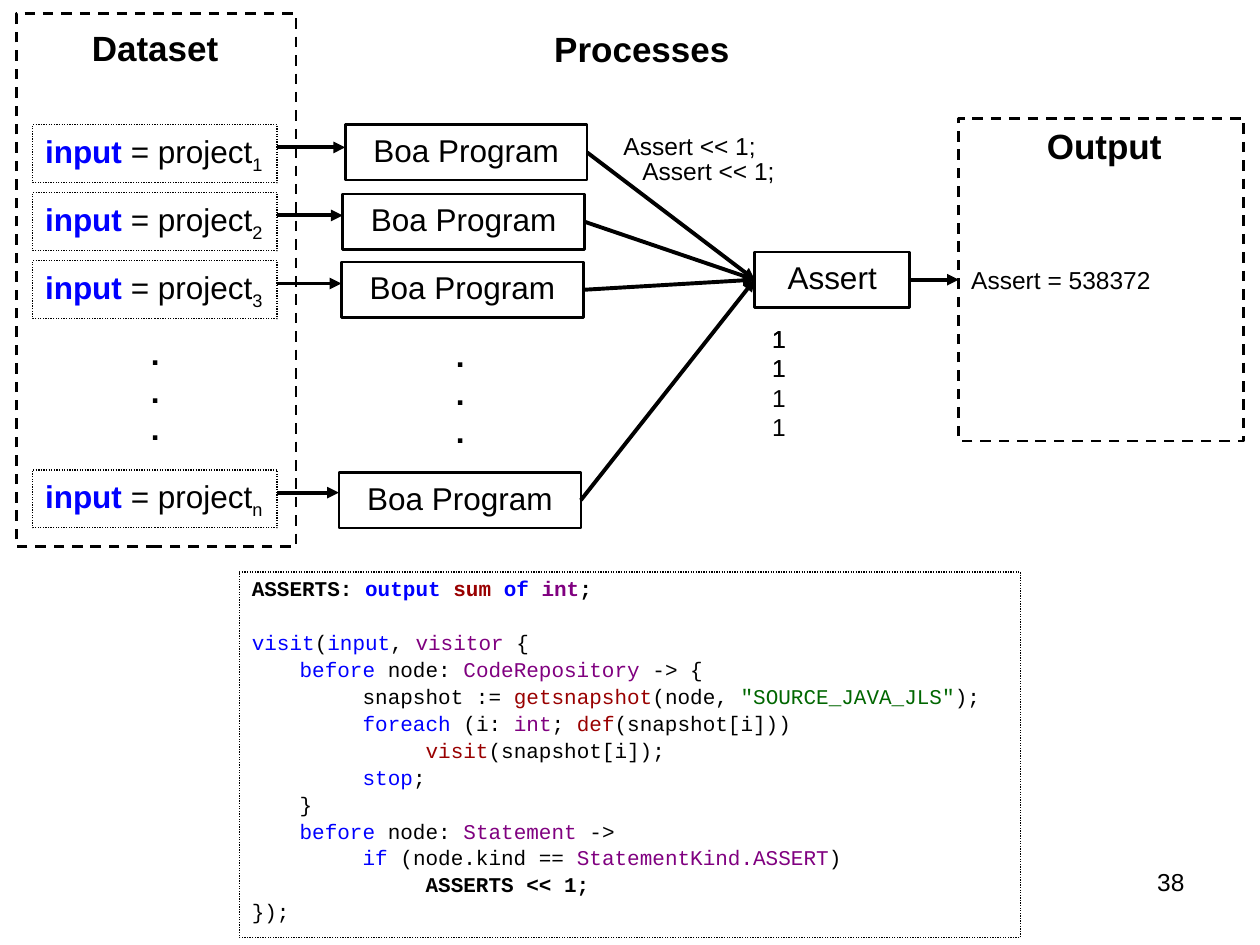
"""Build a slide showing how a Boa program counts asserts over a dataset."""
from lxml import etree
from pptx import Presentation
from pptx.dml.color import RGBColor
from pptx.enum.dml import MSO_LINE
from pptx.enum.shapes import MSO_CONNECTOR, MSO_SHAPE
from pptx.enum.text import MSO_ANCHOR, MSO_AUTO_SIZE, PP_ALIGN
from pptx.oxml.ns import qn
from pptx.util import Inches, Pt

RECTANGLE = MSO_SHAPE.RECTANGLE
STRAIGHT = MSO_CONNECTOR.STRAIGHT
DASH, DOTTED = MSO_LINE.DASH, MSO_LINE.ROUND_DOT
MIDDLE, TOP = MSO_ANCHOR.MIDDLE, MSO_ANCHOR.TOP
LEFT, CENTER, RIGHT = PP_ALIGN.LEFT, PP_ALIGN.CENTER, PP_ALIGN.RIGHT
FIT_SHAPE, FIXED_SIZE = MSO_AUTO_SIZE.SHAPE_TO_FIT_TEXT, MSO_AUTO_SIZE.NONE

BLACK, WHITE, BLUE = "000000", "FFFFFF", "0000FF"
RED, PURPLE, GREEN = "990000", "800080", "006600"

HEADINGS = [
    ("Dataset", 0.63, 0.16, 1.25),
    ("Processes", 4.3, 0.17, 1.6),
    ("Output", 8.21, 0.94, 1.13),
]
ROWS = [("1", 0.99, 2.74, 0.99), ("2", 1.53, 2.72, 1.54),
        ("3", 2.07, 2.71, 2.08), ("n", 3.73, 2.69, 3.75)]
ELLIPSES = [(1.1, 2.6), (3.52, 2.62)]
EMITTED = [(4.85, 0.99), (5, 1.19)]
RECEIVED = [(1, 0.34), (2, 0.57), (4, 1.04)]
INPUT_LEFT, INPUT_WIDTH, INPUT_HEIGHT = 0.26, 1.94, 0.46
PROGRAM_WIDTH, STEP_HEIGHT = 1.92, 0.44
ASSERT_LEFT, ASSERT_TOP, ASSERT_WIDTH = 5.99, 2, 1.23
OUTPUT_LEFT = 7.61

DECLARATION = [("ASSERTS: ", BLACK), ("output ", BLUE), ("sum ", RED),
               ("of ", BLUE), ("int", PURPLE), (";", BLACK)]
VISITOR = [("visit", BLUE), ("(", BLACK), ("input", BLUE), (", ", BLACK),
           ("visitor", PURPLE), (" {", BLACK)]
EMIT = [("\t\t\tASSERTS << 1;", BLACK)]
CODE = [
    DECLARATION,
    VISITOR,
    [("\t", BLACK), ("before", BLUE), (" node: ", BLACK),
     ("CodeRepository ", PURPLE), ("-> {", BLACK)],
    [("\t\tsnapshot := ", BLACK), ("getsnapshot", RED), ("(node, ", BLACK),
     ('"SOURCE_JAVA_JLS"', GREEN), (");", BLACK)],
    [("\t\t", BLACK), ("foreach ", BLUE), ("(i: ", BLACK), ("int", PURPLE),
     ("; ", BLACK), ("def", RED), ("(snapshot[i]))", BLACK)],
    [("\t\t\t", BLACK), ("visit", RED), ("(snapshot[i]);", BLACK)],
    [("\t\t", BLACK), ("stop", BLUE), (";", BLACK)],
    [("\t}", BLACK)],
    [("\t", BLACK), ("before", BLUE), (" node: ", BLACK),
     ("Statement", PURPLE), (" ->", BLACK)],
    [("\t\t", BLACK), ("if", BLUE), (" (node.kind == ", BLACK),
     ("StatementKind.ASSERT", PURPLE), (")", BLACK)],
    EMIT,
    [("});", BLACK)],
]
BOLD_LINES = (DECLARATION, EMIT)


def colour(value):
    return RGBColor.from_string(value)


def add_span(para, text, size, value=BLACK, bold=False, font="Arial"):
    span = para.add_run()
    span.text = text
    span.font.name, span.font.size, span.font.bold = font, Pt(size), bold
    span.font.color.rgb = colour(value)
    return span


def set_hanging(para, before):
    para.line_spacing, para.space_before = 0.9, Pt(before)
    properties = para._p.get_or_add_pPr()
    properties.set("marL", str(Inches(0.38)))
    properties.set("indent", str(Inches(-0.38)))


def add_box(page, left, top, width, height, weight, dash=None, fill=None):
    box = page.shapes.add_shape(RECTANGLE, Inches(left), Inches(top),
                                Inches(width), Inches(height))
    box.shadow.inherit = False
    if fill:
        box.fill.solid()
        box.fill.fore_color.rgb = colour(fill)
    else:
        box.fill.background()
    box.line.color.rgb = colour(BLACK)
    box.line.width = Pt(weight)
    if dash:
        box.line.dash_style = dash
    box.text_frame.vertical_anchor = MIDDLE
    box.text_frame.paragraphs[0].alignment = LEFT
    return box


def add_label(page, lines, left, top, width, height, size, bold=False):
    box = page.shapes.add_textbox(Inches(left), Inches(top),
                                  Inches(width), Inches(height))
    frame = box.text_frame
    frame.word_wrap, frame.auto_size = False, FIT_SHAPE
    for index, line in enumerate(lines):
        para = frame.add_paragraph() if index else frame.paragraphs[0]
        add_span(para, line, size, bold=bold)
    return box


def add_input(page, subscript, top):
    box = add_box(page, INPUT_LEFT, top, INPUT_WIDTH, INPUT_HEIGHT, 0.75, DOTTED)
    box.text_frame.word_wrap = False
    para = box.text_frame.paragraphs[0]
    add_span(para, "input ", 18, BLUE, True)
    add_span(para, "= project", 18)
    span = add_span(para, subscript, 18)
    span.font._element.set("baseline", "-25000")


def add_step(page, text, left, top, width):
    box = add_box(page, left, top, width, STEP_HEIGHT, 1.5, fill=WHITE)
    box.text_frame.word_wrap = True
    para = box.text_frame.paragraphs[0]
    para.alignment = CENTER
    set_hanging(para, 4.5)
    add_span(para, text, 18)


def add_arrow(page, start, end):
    points = [Inches(value) for value in (*start, *end)]
    arrow = page.shapes.add_connector(STRAIGHT, *points)
    arrow.line.color.rgb = colour(BLACK)
    arrow.line.width = Pt(2.25)
    etree.SubElement(arrow.line._get_or_add_ln(), qn("a:tailEnd"), type="triangle")
    etree.SubElement(arrow._element.spPr, qn("a:effectLst"))


def add_code(page):
    box = add_box(page, 1.9, 4.54, 6.2, 2.9, 0.75, DOTTED, WHITE)
    frame = box.text_frame
    frame.word_wrap, frame.vertical_anchor = True, TOP
    for index, line in enumerate(CODE):
        para = frame.add_paragraph() if index else frame.paragraphs[0]
        para.alignment = LEFT
        set_hanging(para, 18.2 if line is VISITOR else 2.4)
        for text, value in line:
            add_span(para, text, 12, value, line in BOLD_LINES, "Courier New")


def main():
    deck = Presentation()
    deck.slide_width, deck.slide_height = Inches(10), Inches(7.5)
    page = deck.slides.add_slide(deck.slide_layouts[6])

    number = add_label(page, ["38"], 7.17, 6.83, 2.33, 0.52, 14).text_frame
    number.word_wrap, number.auto_size = True, FIXED_SIZE
    number.paragraphs[0].alignment = RIGHT

    add_box(page, 0.13, 0.11, 2.22, 4.23, 1.5, DASH)
    result = add_box(page, OUTPUT_LEFT, 0.94, 2.26, 2.56, 1.5, DASH).text_frame
    result.word_wrap = False
    add_span(result.paragraphs[0], "Assert = 538372", 14)
    for text, left, top, width in HEADINGS:
        add_label(page, [text], left, top, width, 0.43, 20, True)

    assert_middle = ASSERT_TOP + STEP_HEIGHT / 2
    add_step(page, "Assert", ASSERT_LEFT, ASSERT_TOP, ASSERT_WIDTH)
    for subscript, input_top, left, top in ROWS:
        add_input(page, subscript, input_top)
        add_step(page, "Boa Program", left, top, PROGRAM_WIDTH)
        arrow_top = input_top + 0.18
        add_arrow(page, (INPUT_LEFT + INPUT_WIDTH, arrow_top), (left, arrow_top))
        add_arrow(page, (left + PROGRAM_WIDTH, top + STEP_HEIGHT / 2),
                  (ASSERT_LEFT, assert_middle))
    add_arrow(page, (ASSERT_LEFT + ASSERT_WIDTH, assert_middle),
              (OUTPUT_LEFT, assert_middle))

    for left, top in ELLIPSES:
        add_label(page, ["."] * 3, left, top, 0.27, 1, 18, True)
    for left, top in EMITTED:
        add_label(page, ["Assert << 1;"], left, top, 1.26, 0.34, 14)
    for count, height in RECEIVED:
        add_label(page, ["1"] * count, 6.03, 2.52, 0.31, height, 14)
    add_code(page)
    deck.save("out.pptx")


if __name__ == "__main__":
    main()
